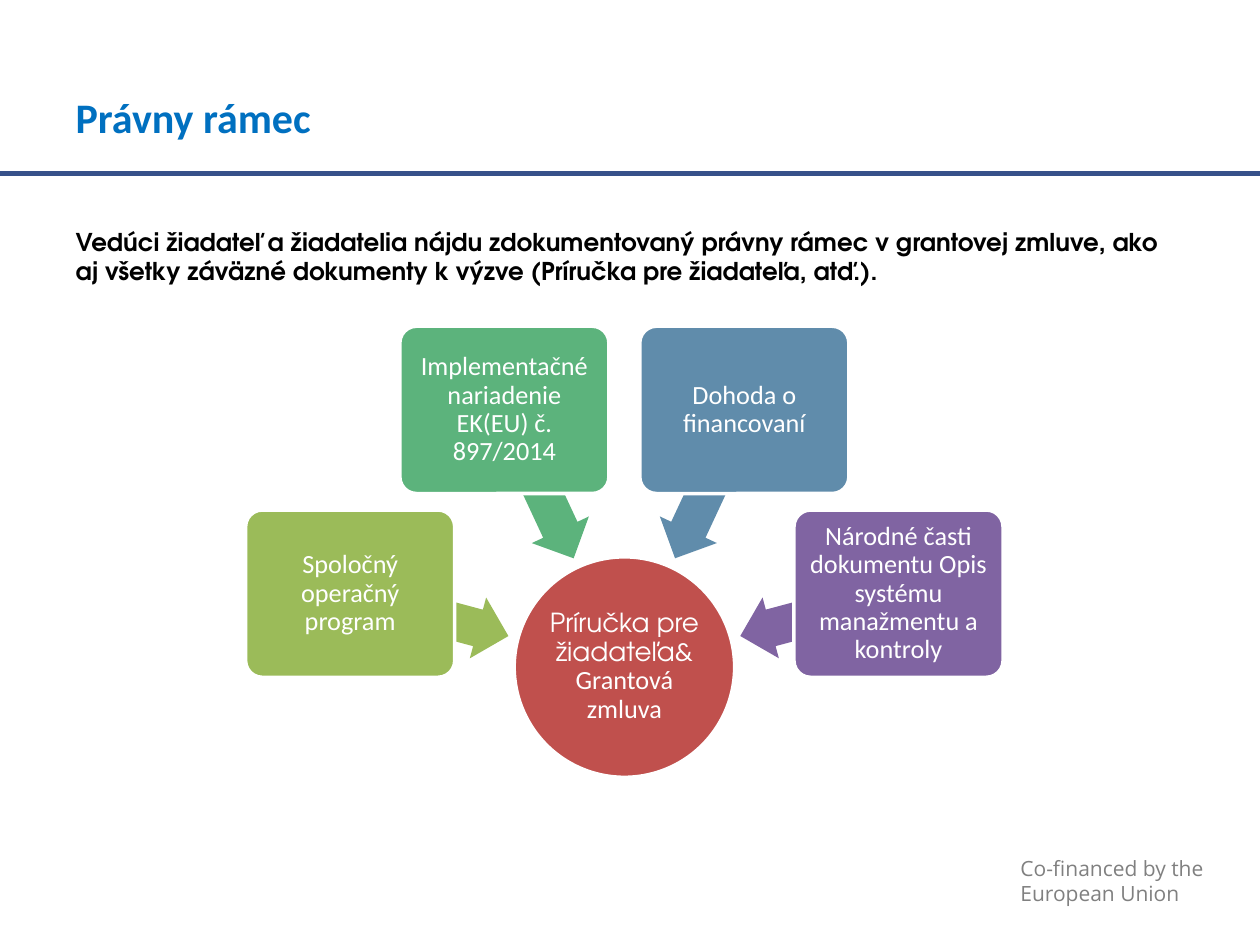
import math
from dataclasses import dataclass

from lxml import etree
from pptx import Presentation
from pptx.dml.color import RGBColor
from pptx.enum import shapes, text
from pptx.oxml.ns import qn
from pptx.util import Pt

WHITE = RGBColor(0xFF, 0xFF, 0xFF)
BLACK = RGBColor(0x00, 0x00, 0x00)
GREY = RGBColor(0x80, 0x80, 0x80)
TITLE_BLUE = RGBColor(0x00, 0x70, 0xC0)
RULE_BLUE = RGBColor(0x37, 0x51, 0x8A)
RED = RGBColor(0xC0, 0x50, 0x4D)
OLIVE = RGBColor(0x9B, 0xBB, 0x59)
GREEN = RGBColor(0x5C, 0xB3, 0x7C)
STEEL = RGBColor(0x60, 0x8C, 0xAB)
PURPLE = RGBColor(0x80, 0x64, 0xA2)

BODY_FONT = "TeX Gyre Adventor"
HUB_X, HUB_Y, HUB_SIZE = 356.8, 381.2, 126
BOX_W, BOX_H, BOX_RADIUS = 119.5, 95.6, 162.2
ARROW_W, ARROW_H, ARROW_RADIUS = 93.6, 36, 115.4


@dataclass
class Source:
    """A document placed around the hub, at an angle clockwise from the right."""
    label: str
    angle: int
    color: RGBColor


SOURCES = [
    Source("Spoločný operačný program", 195, OLIVE),
    Source("Implementačné nariadenie EK(EU) č. 897/2014", 245, GREEN),
    Source("Dohoda o financovaní", 295, STEEL),
    Source("Národné časti dokumentu Opis systému manažmentu a kontroly", 345, PURPLE),
]


def add_run(p, content: str, *, size: float, color: RGBColor,
            font: str = "Calibri", bold: bool = False) -> None:
    r = p.add_run()
    r.text = content
    r.font.name = font
    r.font.size = Pt(size)
    r.font.bold = bold
    r.font.color.rgb = color


def setup_frame(sp, *, anchor=text.MSO_ANCHOR.TOP, inset: float | None = None):
    tf = sp.text_frame
    tf.word_wrap = True
    tf.auto_size = text.MSO_AUTO_SIZE.NONE
    tf.vertical_anchor = anchor
    if inset is not None:
        tf.margin_left = tf.margin_right = tf.margin_top = tf.margin_bottom = Pt(inset)
    return tf


def place(sp, left: float, top: float, width: float, height: float) -> None:
    sp.left, sp.top, sp.width, sp.height = Pt(left), Pt(top), Pt(width), Pt(height)


def add_centred(s, kind, x: float, y: float, w: float, h: float,
                color: RGBColor, outlined: bool = True):
    """Add a filled shape whose middle is at x, y."""
    sp = s.shapes.add_shape(kind, Pt(x - w / 2), Pt(y - h / 2), Pt(w), Pt(h))
    sp.shadow.inherit = False
    sp.fill.solid()
    sp.fill.fore_color.rgb = color
    if outlined:
        sp.line.color.rgb = WHITE
        sp.line.width = Pt(2)
    else:
        sp.line.fill.background()
    return sp


def label_shape(sp, inset: float, runs: list[tuple[str, str]]) -> None:
    p = setup_frame(sp, anchor=text.MSO_ANCHOR.MIDDLE, inset=inset).paragraphs[0]
    p.alignment = text.PP_ALIGN.CENTER
    p.line_spacing = 0.9
    for content, font in runs:
        add_run(p, content, size=15, color=WHITE, font=font)


def around_hub(angle: int, radius: float) -> tuple[float, float]:
    a = math.radians(angle)
    return HUB_X + radius * math.cos(a), HUB_Y + radius * math.sin(a)


def add_source(s, source: Source) -> None:
    x, y = around_hub(source.angle, ARROW_RADIUS)
    arrow = add_centred(s, shapes.MSO_SHAPE.LEFT_ARROW, x, y, ARROW_W, ARROW_H,
                        source.color, outlined=False)
    arrow.adjustments[0] = 0.6
    arrow.adjustments[1] = 0.5
    arrow.rotation = source.angle

    x, y = around_hub(source.angle, BOX_RADIUS)
    box = add_centred(s, shapes.MSO_SHAPE.ROUNDED_RECTANGLE, x, y, BOX_W, BOX_H,
                      source.color)
    box.adjustments[0] = 0.1
    label_shape(box, 2.2, [(source.label, "Calibri")])


def add_rule(s) -> None:
    rule = s.shapes.add_connector(shapes.MSO_CONNECTOR.STRAIGHT,
                                  Pt(0), Pt(99.3), Pt(720), Pt(99.3))
    rule.line.color.rgb = RULE_BLUE
    rule.line.width = Pt(3)
    etree.SubElement(rule._element.spPr, qn("a:effectLst"))


def add_funding_note(s) -> None:
    sp = s.shapes.add_textbox(Pt(576), Pt(485.3), Pt(123.8), Pt(36))
    tf = setup_frame(sp)
    add_run(tf.paragraphs[0], "Co-financed by the", size=12, color=GREY, font="Open Sans")
    add_run(tf.add_paragraph(), "European Union", size=12, color=GREY, font="Open Sans")


def fill_placeholders(s) -> None:
    title, body = s.shapes.title, s.placeholders[1]
    place(title, 36, 21.6, 511.2, 90)
    p = setup_frame(title, anchor=text.MSO_ANCHOR.MIDDLE).paragraphs[0]
    p.alignment = text.PP_ALIGN.LEFT
    add_run(p, "Právny rámec", size=24, color=TITLE_BLUE, bold=True)

    place(body, 36, 126, 648, 356.4)
    p = setup_frame(body).paragraphs[0]
    pPr = p._p.get_or_add_pPr()
    pPr.set("marL", "0")
    pPr.set("indent", "0")
    etree.SubElement(pPr, qn("a:buNone"))
    p.space_before = Pt(0)
    add_run(p, "Vedúci žiadateľ a žiadatelia nájdu zdokumentovaný právny rámec "
               "v grantovej zmluve, ako aj všetky záväzné dokumenty k výzve "
               "(Príručka pre žiadateľa, atď.).",
            size=14, color=BLACK, font=BODY_FONT, bold=True)


def main() -> None:
    prs = Presentation()
    prs.slide_width, prs.slide_height = Pt(720), Pt(540)
    s = prs.slides.add_slide(prs.slide_layouts[1])
    fill_placeholders(s)
    add_rule(s)
    add_funding_note(s)
    hub = add_centred(s, shapes.MSO_SHAPE.OVAL, HUB_X, HUB_Y, HUB_SIZE, HUB_SIZE, RED)
    label_shape(hub, 0.8, [("Príručka pre žiadateľa", BODY_FONT),
                           ("& Grantová zmluva", "Calibri")])
    for source in SOURCES:
        add_source(s, source)
    prs.save("out.pptx")


if __name__ == "__main__":
    main()
